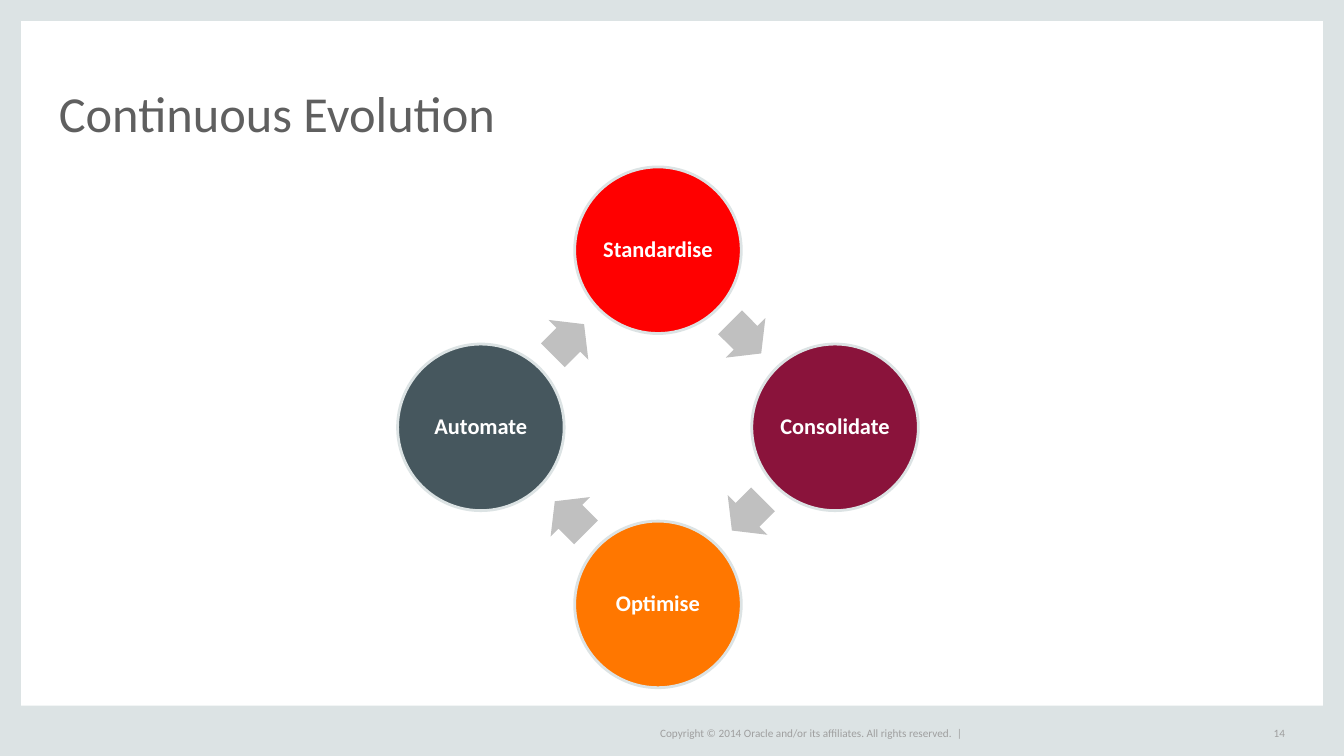
from math import cos, sin, radians
from pptx import Presentation
from pptx.util import Pt
from pptx.dml.color import RGBColor
from pptx.enum.shapes import MSO_SHAPE as Shape
from pptx.enum.text import MSO_ANCHOR as Anchor, PP_ALIGN as Align

WIDTH, HEIGHT = 960, 540
PALE, GREY, TITLE, ARROW, WHITE = "DCE3E4", "9F9F9F", "5F5F5F", "C0C0C0", "FFFFFF"
STEPS = [("Standardise", "FF0000"), ("Consolidate", "8A133B"),
         ("Optimise", "FF7700"), ("Automate", "46575E")]


def tint(part, color):
    """Give a fill a solid colour."""
    part.solid()
    part.fore_color.rgb = RGBColor.from_string(color)


def add_shape(slide, kind, box, color, edge=None):
    shape = slide.shapes.add_shape(kind, *map(Pt, box))
    shape.shadow.inherit = False
    tint(shape.fill, color)
    if edge:
        tint(shape.line.fill, edge)
        shape.line.width = Pt(2)
    else:
        shape.line.fill.background()
    return shape


def write(shape, text, size, color, align=Align.LEFT, anchor=Anchor.MIDDLE,
          inset=0, wrap=True, bold=False, space=1.0):
    frame = shape.text_frame
    look = {"word_wrap": wrap, "vertical_anchor": anchor}
    look.update({f"margin_{side}": Pt(inset)
                 for side in ("left", "top", "right", "bottom")})
    para = frame.paragraphs[0]
    para.text = text
    for part, values in (
            (frame, look),
            (para, {"alignment": align, "line_spacing": space}),
            (para.font, {"name": "Calibri", "size": Pt(size), "bold": bold})):
        for key, value in values.items():
            setattr(part, key, value)
    tint(para.font.fill, color)


def add_text(slide, box, *args, **look):
    write(slide.shapes.add_textbox(*map(Pt, box)), *args, **look)


def add_frame(slide, left, top, width, height, edge=15, foot=36):
    for box in ((left, top, edge, height),
                (left + width - edge, top, edge, height),
                (left, top + height - foot, width, foot),
                (left, top, width, edge)):
        add_shape(slide, Shape.RECTANGLE, box, PALE)


def add_footer(slide, left, top, width, height):
    add_text(slide, (left, top, 220, height),
             "Copyright © 2014 Oracle and/or its affiliates. All rights reserved.  |",
             8, GREY, wrap=False)
    add_text(slide, (left + width - 30, top, 30, height), "14", 8, GREY,
             align=Align.RIGHT, wrap=False)


def add_cycle(slide, left, top, side, disc=119):
    """Discs clockwise from the top of a square, with arrows between."""
    ring = (side - disc) / 2
    reach = ring * cos(radians(45))
    wide, high = 31.5, 40

    def place(angle, dist, w, h):
        mid = side / 2
        return (left + mid + dist * cos(radians(angle)) - w / 2,
                top + mid + dist * sin(radians(angle)) - h / 2, w, h)

    for i, (name, color) in enumerate(STEPS):
        turn = 90 * i
        circle = add_shape(slide, Shape.OVAL, place(turn - 90, ring, disc, disc),
                           color, PALE)
        write(circle, name, 16, WHITE, align=Align.CENTER, inset=1.5,
              bold=True, space=0.9)
        arrow = add_shape(slide, Shape.RIGHT_ARROW,
                          place(turn - 45.6, reach, wide, high), ARROW)
        arrow.adjustments[0] = 0.6
        arrow.rotation = turn + 45


def main():
    deck = Presentation()
    deck.slide_width, deck.slide_height = Pt(WIDTH), Pt(HEIGHT)
    slide = deck.slides.add_slide(deck.slide_layouts[6])
    add_frame(slide, 0, 0, WIDTH, HEIGHT)
    add_footer(slide, 471.5, 516.5, 446.5, 14.5)
    add_text(slide, (42, 31.5, 876, 70), "Continuous Evolution", 36, TITLE,
             anchor=Anchor.BOTTOM, space=0.8)
    add_cycle(slide, 284, 119.25, 372)
    deck.save("out.pptx")


if __name__ == "__main__":
    main()
